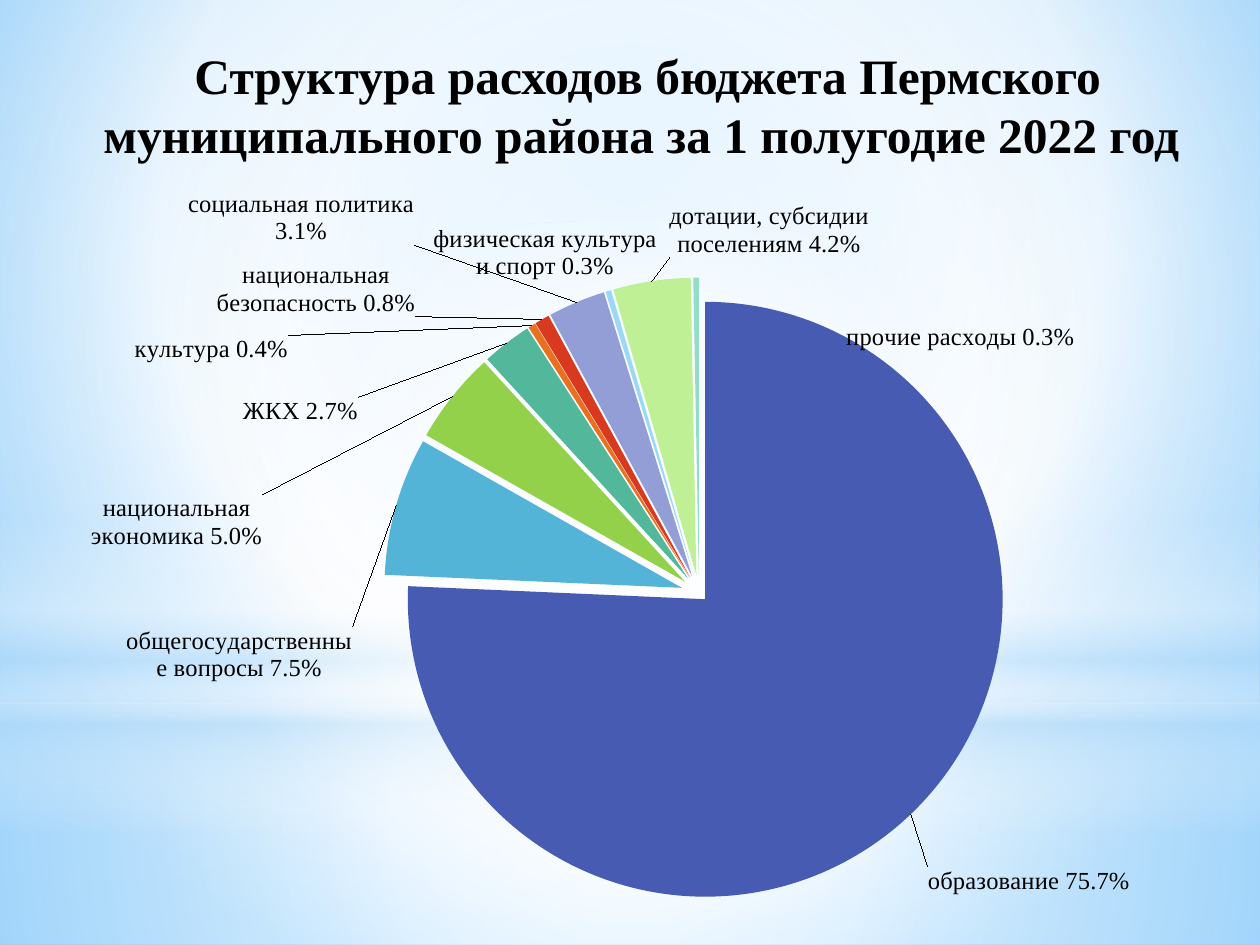
"""Build the slide on the structure of district budget spending."""
from dataclasses import dataclass
from typing import Optional

import pptx
import pptx.chart.data
import pptx.dml.color
import pptx.enum.chart
import pptx.enum.shapes
import pptx.enum.text
import pptx.oxml
import pptx.oxml.ns
import pptx.util

Pt = pptx.util.Pt
RGB = pptx.dml.color.RGBColor
MSO = pptx.enum.shapes.MSO_SHAPE
qn = pptx.oxml.ns.qn

BLACK = RGB(0, 0, 0)
WHITE = RGB(255, 255, 255)
PALE = RGB(0xB4, 0xDC, 0xFA)
SKY = RGB(0x9E, 0xD5, 0xFF)
AZURE = RGB(0x5B, 0xB9, 0xFF)
FONT = "Times New Roman"
NS = pptx.oxml.ns.nsdecls("a", "c")
CHART_BOX = (28.08, 103.68, 674.64, 417.6)
CENTRE = (50, 50, 50, 50)


@dataclass
class Stop:
    pos: int
    color: RGB
    alpha: int = 100


@dataclass
class Glow:
    shape: MSO
    top: float
    height: float
    stops: list[Stop]
    focus: Optional[tuple] = CENTRE


@dataclass
class Expense:
    name: str
    share: float
    color: RGB
    dx: float
    dy: float
    explosion: int = 6


GLOWS = [
    Glow(MSO.RECTANGLE, 401.76, 138.24, [Stop(0, WHITE, 91), Stop(37, WHITE, 76), Stop(100, PALE, 79)]),
    Glow(MSO.RECTANGLE, 0, 401.76, [Stop(0, WHITE, 89), Stop(48, WHITE, 62), Stop(100, PALE, 79)]),
    Glow(MSO.RECTANGLE, 296.64, 180, [Stop(0, WHITE, 0), Stop(29, WHITE, 30), Stop(45, PALE, 40),
                                      Stop(55, WHITE, 26), Stop(65, PALE, 60), Stop(100, WHITE, 0)], None),
    Glow(MSO.OVAL, 126, 401.76, [Stop(0, WHITE), Stop(56, WHITE, 0)]),
]

EXPENSES = [
    Expense("образование", 0.757, RGB(0x46, 0x5B, 0xB1), 7, 27, 3),
    Expense("общегосударственные вопросы", 0.075, RGB(0x53, 0xB4, 0xD8), -21, 102),
    Expense("национальная экономика", 0.05, RGB(0x94, 0xD1, 0x4A), -105, 90),
    Expense("ЖКХ", 0.027, RGB(0x53, 0xB7, 0x9C), -82, 50),
    Expense("культура", 0.004, RGB(0xE8, 0x70, 0x1E), -137, 25),
    Expense("национальная безопасность", 0.008, RGB(0xD8, 0x39, 0x1F), -70, 2),
    Expense("социальная политика", 0.031, RGB(0x94, 0x9E, 0xD6), -91, -29),
    Expense("физическая культура и спорт", 0.003, RGB(0x9B, 0xD8, 0xF6), 29, -2),
    Expense("дотации, субсидии поселениям", 0.042, RGB(0xC0, 0xF0, 0x96), 125, -9),
    Expense("прочие расходы", 0.003, RGB(0x93, 0xDC, 0xC6), 151, 46),
]


def set_gradient(holder, fill, stops: list[Stop], focus: Optional[tuple]) -> None:
    """Replace the fill of a background or shape with a gradient."""
    fill.solid()
    fill.fore_color.rgb = WHITE
    marks = "".join(
        f'<a:gs pos="{g.pos * 1000}"><a:srgbClr val="{g.color}">'
        f'<a:alpha val="{g.alpha * 1000}"/></a:srgbClr></a:gs>' for g in stops)
    if focus:
        sides = " ".join(f'{k}="{v * 1000}"' for k, v in zip("ltrb", focus))
        course = f'<a:path path="circle"><a:fillToRect {sides}/></a:path>'
    else:
        course = '<a:lin ang="5400000" scaled="0"/>'
    solid = next(holder.iter(qn("a:solidFill")))
    solid.getparent().replace(solid, pptx.oxml.parse_xml(
        f'<a:gradFill {NS} rotWithShape="1"><a:gsLst>{marks}</a:gsLst>{course}</a:gradFill>'))


def add_glow(s, glow: Glow) -> None:
    """Draw one full-width background glow."""
    sp = s.shapes.add_shape(glow.shape, 0, Pt(glow.top), Pt(720), Pt(glow.height))
    sp.shadow.inherit = False
    sp.line.fill.background()
    set_gradient(sp._element.spPr, sp.fill, glow.stops, glow.focus)


def set_title(s, text: str) -> None:
    """Fill the title and bring it in front of the glows."""
    sp = s.shapes.title
    sp.left, sp.top, sp.width, sp.height = Pt(25.2), Pt(15.12), Pt(683.28), Pt(88.56)
    tf = sp.text_frame
    tf.text = text
    tf.word_wrap = True
    tf.auto_size = pptx.enum.text.MSO_AUTO_SIZE.NONE
    tf.vertical_anchor = pptx.enum.text.MSO_ANCHOR.MIDDLE
    p = tf.paragraphs[0]
    p.alignment = pptx.enum.text.PP_ALIGN.CENTER
    f = p.runs[0].font
    f.name, f.size, f.bold, f.color.rgb = FONT, Pt(28.3), True, BLACK
    s.shapes._spTree.append(sp._element)


def manual_layout(inner: str) -> str:
    """Return a chart layout element."""
    return f"<c:layout {NS}><c:manualLayout>{inner}</c:manualLayout></c:layout>"


def labels_xml(expenses: list[Expense]) -> str:
    """Return the data labels with their offsets."""
    head = '<c:numFmt formatCode="0.0%" sourceLinked="0"/><c:spPr><a:noFill/><a:ln><a:noFill/></a:ln></c:spPr>'
    text = (f'<c:txPr><a:bodyPr wrap="square"/><a:p><a:pPr><a:defRPr sz="1400" b="0"><a:solidFill>'
            f'<a:srgbClr val="{BLACK}"/></a:solidFill><a:latin typeface="{FONT}"/>'
            f'<a:cs typeface="{FONT}"/></a:defRPr></a:pPr><a:endParaRPr lang="ru-RU"/></a:p></c:txPr>')
    flags = "".join(f'<c:show{k} val="{v}"/>' for k, v in (
        ("LegendKey", 0), ("Val", 1), ("CatName", 1), ("SerName", 0), ("Percent", 0), ("BubbleSize", 0)))
    common = f'{head}{text}<c:dLblPos val="outEnd"/>{flags}<c:separator> </c:separator>'
    width, height = CHART_BOX[2:]
    items = "".join(
        f'<c:dLbl><c:idx val="{i}"/>'
        + manual_layout(f'<c:x val="{e.dx / width:.3f}"/><c:y val="{e.dy / height:.3f}"/>')
        + f"{common}</c:dLbl>" for i, e in enumerate(expenses))
    return f'<c:dLbls {NS}>{items}{common}<c:showLeaderLines val="1"/></c:dLbls>'


def add_pie(s, expenses: list[Expense]) -> None:
    """Draw the exploded pie with labels and leader lines."""
    data = pptx.chart.data.CategoryChartData(number_format="0.0%")
    data.categories = [e.name for e in expenses]
    data.add_series("Series 1", [e.share for e in expenses])
    chart = s.shapes.add_chart(pptx.enum.chart.XL_CHART_TYPE.PIE, *map(Pt, CHART_BOX), data).chart
    chart.has_legend = chart.has_title = False
    chart.font.name, chart.font.size, chart.font.color.rgb = "Roboto", Pt(18), BLACK
    chart.plots[0].vary_by_categories = True
    series = chart.plots[0].series[0]
    ser = series._element
    for i, e in enumerate(expenses):
        fmt = series.points[i].format
        fmt.fill.solid()
        fmt.fill.fore_color.rgb = e.color
        fmt.line.fill.background()
    for point, e in zip(ser.findall(qn("c:dPt")), expenses):
        point.find(qn("c:spPr")).addprevious(
            pptx.oxml.parse_xml(f'<c:explosion {NS} val="{e.explosion}"/>'))
    ser.find(qn("c:tx")).addnext(pptx.oxml.parse_xml(f'<c:explosion {NS} val="3"/>'))
    ser.find(qn("c:cat")).addprevious(pptx.oxml.parse_xml(labels_xml(expenses)))
    area = next(chart._chartSpace.iter(qn("c:plotArea")))
    for old in area.findall(qn("c:layout")):
        area.remove(old)
    area.insert(0, pptx.oxml.parse_xml(manual_layout(
        '<c:layoutTarget val="inner"/><c:xMode val="edge"/><c:yMode val="edge"/>'
        '<c:x val="0.291"/><c:y val="0.143"/><c:w val="0.519"/><c:h val="0.84"/>')))


def main() -> None:
    """Build and save the presentation."""
    prs = pptx.Presentation()
    prs.slide_width, prs.slide_height = Pt(720), Pt(540)
    s = prs.slides.add_slide(prs.slide_layouts[5])
    set_gradient(s._element, s.background.fill,
                 [Stop(0, SKY), Stop(60, WHITE), Stop(100, AZURE)], (20, 10, 20, 60))
    for glow in GLOWS:
        add_glow(s, glow)
    set_title(s, " Структура расходов бюджета Пермского муниципального района за 1 полугодие 2022 год")
    add_pie(s, EXPENSES)
    prs.save("out.pptx")


if __name__ == "__main__":
    main()
